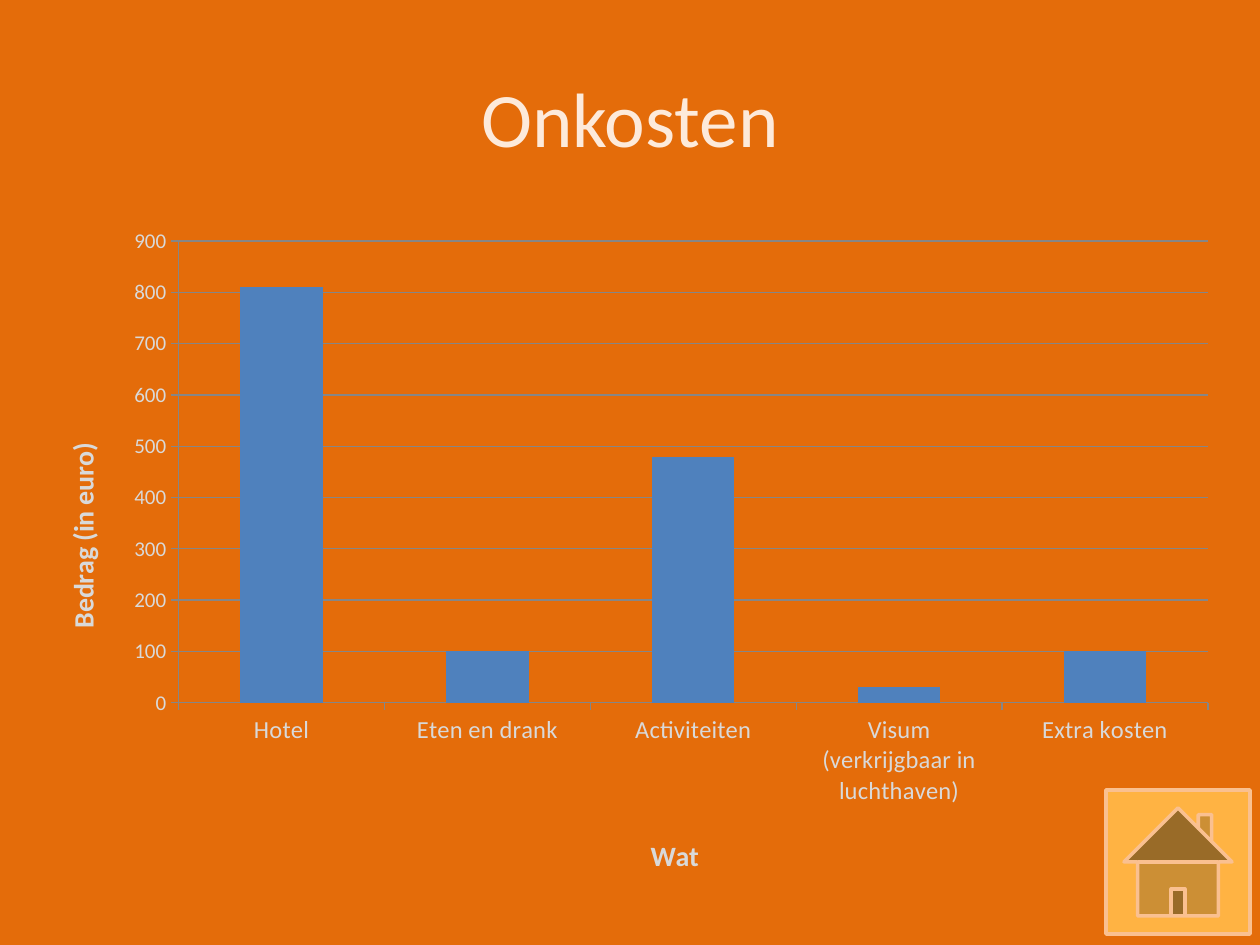
from lxml import etree
from pptx import Presentation
from pptx.chart.data import CategoryChartData
from pptx.dml.color import RGBColor
from pptx.enum.chart import XL_CHART_TYPE as ChartType, XL_TICK_MARK as TickMark
from pptx.enum.shapes import MSO_SHAPE as Shape
from pptx.enum.text import MSO_ANCHOR as Anchor, PP_ALIGN as Align
from pptx.oxml.ns import qn
from pptx.util import Pt

EMU_PER_PX = 914400 / 126
FONT = "Calibri"
ORANGE, CREAM, GREY, GRID, BLUE = "E46C0A", "FDEADA", "D9D9D9", "868686", "4F81BD"
COSTS = {
    "Hotel": 810,
    "Eten en drank": 100,
    "Activiteiten": 480,
    "Visum (verkrijgbaar in luchthaven)": 30,
    "Extra kosten": 100,
}


def px(*lengths):
    return [round(length * EMU_PER_PX) for length in lengths]


def paint(color_format, color):
    color_format.rgb = RGBColor.from_string(color)


def style_font(font, size, color, bold=False):
    font.name, font.size, font.bold = FONT, Pt(size), bold
    paint(font.color, color)


def style_line(line, color, width):
    line.width = Pt(width)
    paint(line.color, color)


def set_layout(parent, index, **places):
    """Give a chart part a manual layout, as fractions of the chart."""
    for old in parent.findall(qn("c:layout")):
        parent.remove(old)
    layout = etree.Element(qn("c:layout"))
    parent.insert(index, layout)
    manual = etree.SubElement(layout, qn("c:manualLayout"))
    for name, value in places.items():
        etree.SubElement(manual, qn(f"c:{name}"), val=str(value))


def style_axis(axis, title, size, x, y):
    """Style an axis and put its title at x, y within the chart."""
    style_font(axis.tick_labels.font, size, GREY)
    style_line(axis.format.line, GRID, 0.75)
    axis.major_tick_mark = TickMark.OUTSIDE
    axis.minor_tick_mark = TickMark.NONE
    frame = axis.axis_title.text_frame
    frame.text = title
    style_font(frame.paragraphs[0].runs[0].font, 16, GREY, bold=True)
    set_layout(axis.axis_title._element, 1, xMode="edge", yMode="edge", x=x, y=y)


def add_home_button(page, left, top, side):
    button = page.shapes.add_shape(Shape.ACTION_BUTTON_HOME, *px(left, top, side, side))
    button.shadow.inherit = False
    button.fill.solid()
    paint(button.fill.fore_color, "FFB343")
    style_line(button.line, "FAC090", 2)


def add_title(page, left, top, width, height):
    frame = page.shapes.add_textbox(*px(left, top, width, height)).text_frame
    frame.word_wrap = True
    frame.vertical_anchor = Anchor.MIDDLE
    frame.text = "Onkosten"
    para = frame.paragraphs[0]
    para.alignment = Align.CENTER
    style_font(para.runs[0].font, 44, CREAM)


def add_cost_chart(page, left, top, width, height):
    data = CategoryChartData()
    data.categories = list(COSTS)
    data.add_series("Series 1", list(COSTS.values()))
    chart = page.shapes.add_chart(
        ChartType.COLUMN_CLUSTERED, *px(left, top, width, height), data
    ).chart
    chart.has_legend = False
    chart.has_title = False
    style_font(chart.font, 10, "000000")

    plot = chart.plots[0]
    plot.gap_width = 150
    plot.vary_by_categories = False
    bars = plot.series[0].format.fill
    bars.solid()
    paint(bars.fore_color, BLUE)

    style_axis(chart.category_axis, "Wat", 14, x=0.51, y=0.91)
    amounts = chart.value_axis
    style_axis(amounts, "Bedrag (in euro)", 12, x=0.02, y=0.33)
    amounts.minimum_scale, amounts.maximum_scale, amounts.major_unit = 0, 900, 100
    amounts.has_major_gridlines = True
    style_line(amounts.major_gridlines.format.line, GRID, 0.75)

    plot_area = chart._chartSpace.find(qn("c:chart")).find(qn("c:plotArea"))
    set_layout(plot_area, 0, layoutTarget="inner", xMode="edge", yMode="edge",
               x=0.12, y=0.04, w=0.86, h=0.68)


def main():
    deck = Presentation()
    deck.slide_width, deck.slide_height = px(1260, 945)
    page = deck.slides.add_slide(deck.slide_layouts[6])
    page.background.fill.solid()
    paint(page.background.fill.fore_color, ORANGE)
    add_home_button(page, 1106, 790, 144)
    add_title(page, 63, 38, 1134, 158)
    add_cost_chart(page, 35, 214, 1197, 679)
    deck.save("out.pptx")


if __name__ == "__main__":
    main()
